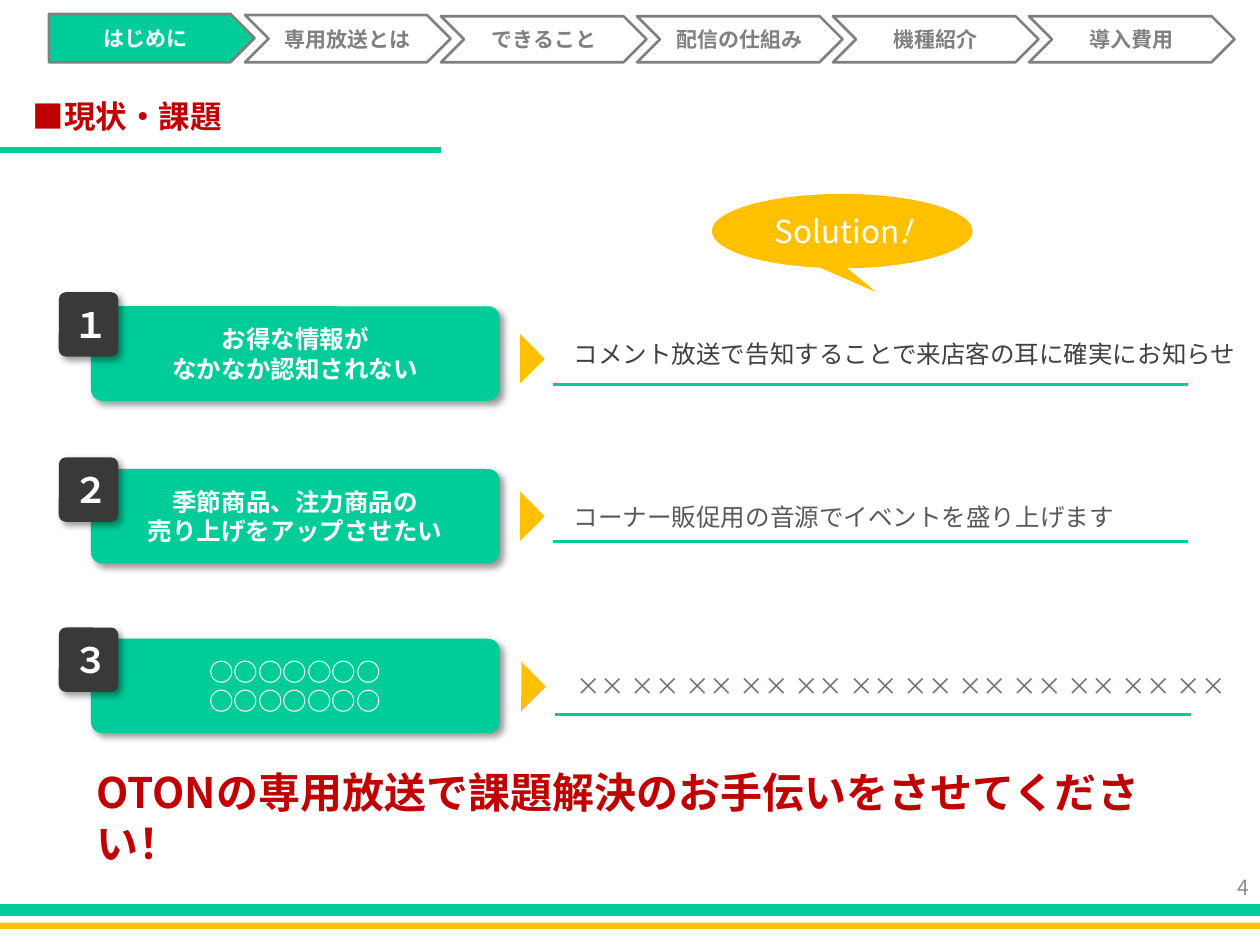
from lxml.etree import SubElement
from pptx import Presentation
from pptx.dml.color import RGBColor
from pptx.enum.shapes import MSO_CONNECTOR, MSO_SHAPE
from pptx.enum.text import MSO_ANCHOR, MSO_AUTO_SIZE, PP_ALIGN
from pptx.oxml.ns import qn
from pptx.util import Pt

COLORS = {
    "green": "00CC99",
    "amber": "FFC000",
    "red": "C00000",
    "white": "FFFFFF",
    "dark": "3B3838",
    "gray": "808080",
    "page": "8C8C8C",
}
TABS = ["はじめに", "専用放送とは", "できること", "配信の仕組み", "機種紹介", "導入費用"]
TAB_TOPS = [8, 8.6, 9.3, 9.3, 9.3, 9.3]
ROWS = [
    {"number": "１", "issue": ["お得な情報が", "なかなか認知されない"],
     "answer": "コメント放送で告知することで来店客の耳に確実にお知らせ", "color": "404040",
     "top": 175, "badge": 167, "arrow": 195, "rule": 219.6, "shift": 0},
    {"number": "２", "issue": ["季節商品、注力商品の", "売り上げをアップさせたい"],
     "answer": "コーナー販促用の音源でイベントを盛り上げます", "color": "595959",
     "top": 268, "badge": 261.4, "arrow": 285, "rule": 309.6, "shift": 0},
    {"number": "３", "issue": ["○○○○○○○", "○○○○○○○"],
     "answer": " ".join(["××"] * 12), "color": "767171",
     "top": 365, "badge": 358.6, "arrow": 382.3, "rule": 408.2, "shift": 1.4},
]


def rgb(color):
    return RGBColor.from_string(COLORS.get(color, color))


class SlideBuilder:
    font_name = "Noto Sans CJK JP"

    def __init__(self, slide):
        self.slide = slide

    def rich_text(self, shape, paragraphs, color, align=PP_ALIGN.CENTER, inset=7.2, **formats):
        frame = shape.text_frame
        settings = {"word_wrap": True, "auto_size": MSO_AUTO_SIZE.NONE,
                    "vertical_anchor": MSO_ANCHOR.MIDDLE,
                    "margin_left": Pt(inset), "margin_right": Pt(min(inset, 7.2)),
                    "margin_top": Pt(3.6), "margin_bottom": Pt(3.6)}
        for name, value in settings.items():
            setattr(frame, name, value)
        for index, runs in enumerate(paragraphs):
            paragraph = frame.paragraphs[0] if index == 0 else frame.add_paragraph()
            paragraph.alignment = align
            for text, italic in runs:
                run = paragraph.add_run()
                run.text = text
                run.font.color.rgb = rgb(color)
                values = {"name": self.font_name, "bold": False, "italic": italic, **formats}
                for name, value in values.items():
                    setattr(run.font, name, value)
                east_asian = SubElement(run.font._element, qn("a:ea"))
                east_asian.set("typeface", self.font_name)

    def text(self, shape, lines, color, **options):
        self.rich_text(shape, [[(line, None)] for line in lines], color, **options)

    def title(self, text, box):
        shape = self.slide.shapes.title
        for name, value in zip(("left", "top", "width", "height"), box):
            setattr(shape, name, Pt(value))
        self.text(shape, [text], "red", align=PP_ALIGN.LEFT, size=Pt(18), bold=True)

    def shape(self, kind, box, fill=None, line=None, weight=1.5, corner=None,
              rotation=0, shadow=False):
        shape = self.slide.shapes.add_shape(kind, *map(Pt, box))
        shape.shadow.inherit = False
        shape.rotation = rotation
        if corner is not None:
            shape.adjustments[0] = corner
        if fill:
            shape.fill.solid()
            shape.fill.fore_color.rgb = rgb(fill)
        else:
            shape.fill.background()
        if line:
            shape.line.color.rgb = rgb(line)
            shape.line.width = Pt(weight)
        else:
            shape.line.fill.background()
        if shadow:
            self.shadow(shape)
        return shape

    def shadow(self, shape):
        effects = shape._element.spPr.find(qn("a:effectLst"))
        outer = SubElement(effects, qn("a:outerShdw"), blurRad=str(Pt(4)), dist=str(Pt(3)),
                           dir=str(45 * 60000), algn="tl", rotWithShape="0")
        color = SubElement(outer, qn("a:srgbClr"), val="000000")
        SubElement(color, qn("a:alpha"), val="40000")

    def rule(self, left, top, width, weight):
        connector = self.slide.shapes.add_connector(
            MSO_CONNECTOR.STRAIGHT, Pt(left), Pt(top), Pt(left + width), Pt(top))
        connector.line.color.rgb = rgb("green")
        connector.line.width = Pt(weight)
        SubElement(connector._element.spPr, qn("a:effectLst"))

    def textbox(self, text, box, color, **options):
        self.text(self.slide.shapes.add_textbox(*map(Pt, box)), [text], color, **options)

    def tab(self, index, label):
        active = index == 0
        top = TAB_TOPS[index]
        shape = self.shape(MSO_SHAPE.PENTAGON if active else MSO_SHAPE.CHEVRON,
                           (28 + 112 * index, top, 117.5, 35.6 - top),
                           "green" if active else "white", "gray")
        self.text(shape, [label], "white" if active else "gray", inset=0,
                  size=Pt(12), bold=True)

    def row(self, row):
        shift = row["shift"]
        card = self.shape(MSO_SHAPE.ROUNDED_RECTANGLE, (52, row["top"], 233.5, 54),
                          "green", corner=0.12, shadow=True)
        self.text(card, row["issue"], "white", size=Pt(14), bold=True)
        badge = self.shape(MSO_SHAPE.ROUNDED_RECTANGLE, (33.6, row["badge"], 34, 36.8),
                           "dark", corner=0.12, shadow=True)
        self.text(badge, [row["number"]], "white", size=Pt(20), bold=True)
        answer = self.shape(MSO_SHAPE.ROUNDED_RECTANGLE,
                            (304.6 + shift, row["top"], 430, 54), corner=0.13)
        self.text(answer, [row["answer"]], row["color"], align=PP_ALIGN.LEFT,
                  inset=21.2, size=Pt(14))
        self.rule(316 + shift, row["rule"], 363, 1.5)
        self.shape(MSO_SHAPE.RIGHT_TRIANGLE, (287.2 + shift / 2, row["arrow"], 20, 20),
                   "amber", rotation=225.3)

    def balloon(self):
        ellipse = self.shape(MSO_SHAPE.OVAL, (406.8, 110.8, 149, 42.5), "amber")
        self.rich_text(ellipse, [[("Solution", None), ("!", True)]], "white", size=Pt(18))
        self.shape(MSO_SHAPE.ISOSCELES_TRIANGLE, (474.5, 131.8, 13, 46), "amber",
                   rotation=121.7)


def main():
    presentation = Presentation()
    presentation.slide_width = Pt(720)
    presentation.slide_height = Pt(540)
    builder = SlideBuilder(presentation.slides.add_slide(presentation.slide_layouts[5]))

    builder.shape(MSO_SHAPE.RECTANGLE, (0, 517, 720, 6), "green", "green", 1)
    builder.shape(MSO_SHAPE.RECTANGLE, (0, 527.2, 720, 3.6), "amber")
    builder.title("■現状・課題", (11.5, 48.2, 199, 36))
    builder.rule(0, 85.7, 252, 3)
    for row in ROWS:
        builder.row(row)
    builder.balloon()
    message = builder.shape(MSO_SHAPE.ROUNDED_RECTANGLE, (46.8, 440.6, 625.7, 52.6), corner=0.08)
    builder.text(message, ["OTONの専用放送で課題解決のお手伝いをさせてください！"], "red",
                 align=PP_ALIGN.LEFT, size=Pt(24), bold=True)
    for index, label in enumerate(TABS):
        builder.tab(index, label)
    builder.textbox("4", (558.7, 492.5, 162, 28.8), "page", align=PP_ALIGN.RIGHT, size=Pt(12))

    presentation.save("out.pptx")


if __name__ == "__main__":
    main()
